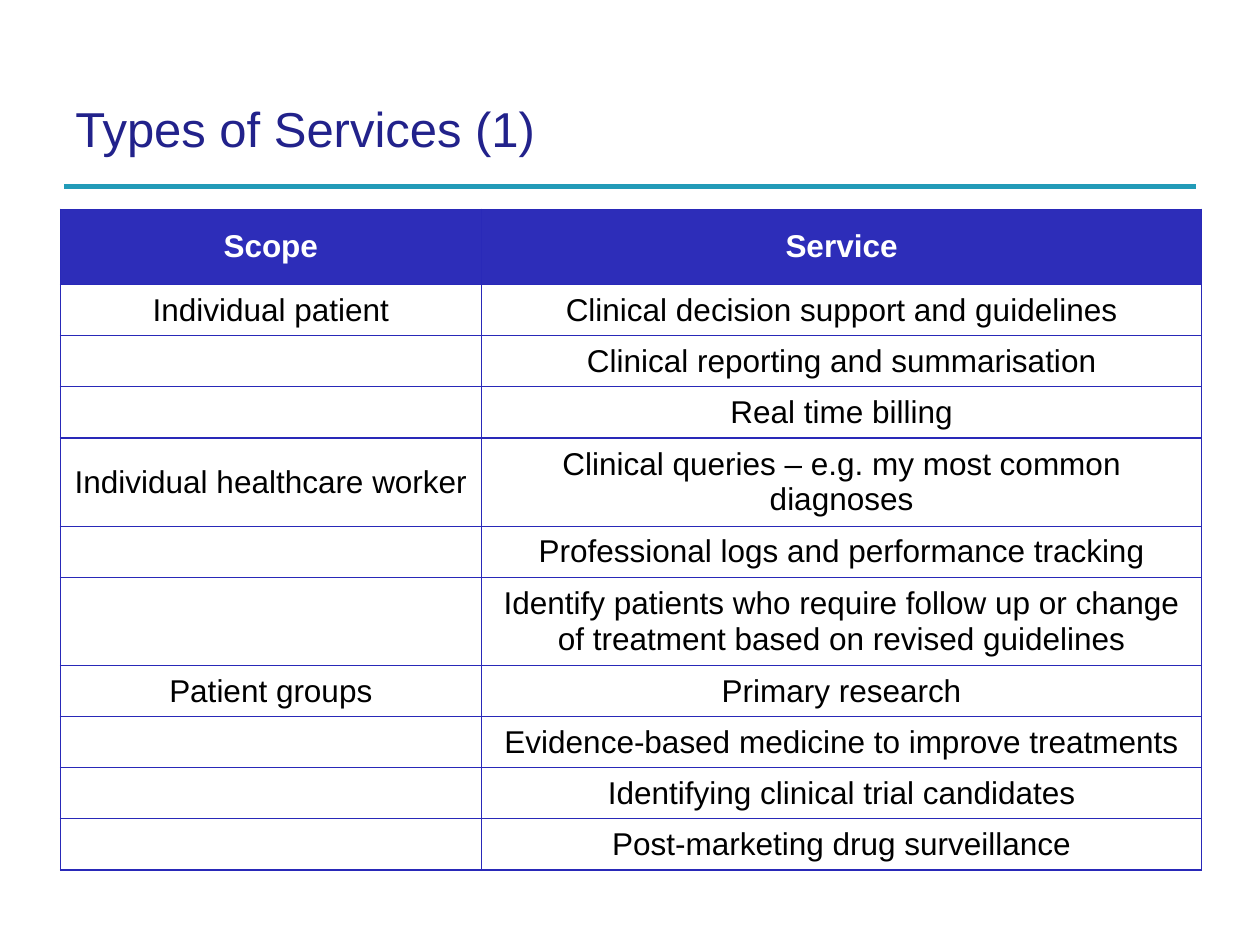
"""Build a slide that lists types of services by scope."""
from typing import NamedTuple

import pptx
import pptx.dml.color
import pptx.enum.shapes
import pptx.enum.text
import pptx.oxml
import pptx.oxml.ns
import pptx.util

Pt = pptx.util.Pt
FONT = "Arial"
NAVY, TEAL, BORDER, HEADER_FILL = "22228B", "229BB8", "2929B8", "2D2DB9"
WHITE, BLACK = "FFFFFF", "000000"
HEADER_HEIGHT, ROW_HEIGHT = 43.2, 29.2
COLUMN_WIDTHS = (240.5, 411.8)


class Service(NamedTuple):
    scope: str
    name: str


HEADINGS = Service("Scope", "Service")
SERVICES = [
    Service("Individual patient", "Clinical decision support and guidelines"),
    Service("", "Clinical reporting and summarisation"),
    Service("", "Real time billing"),
    Service("Individual healthcare worker", "Clinical queries – e.g. my most common diagnoses"),
    Service("", "Professional logs and performance tracking"),
    Service("", "Identify patients who require follow up or change of treatment based on revised guidelines"),
    Service("Patient groups", "Primary research"),
    Service("", "Evidence-based medicine to improve treatments"),
    Service("", "Identifying clinical trial candidates"),
    Service("", "Post-marketing drug surveillance"),
]


def rgb(value: str) -> pptx.dml.color.RGBColor:
    return pptx.dml.color.RGBColor.from_string(value)


def add_run(paragraph, text: str, size: float, color: str, bold: bool = False) -> None:
    run = paragraph.add_run()
    run.text = text
    run.font.name = FONT
    run.font.size = Pt(size)
    run.font.bold = bold
    run.font.color.rgb = rgb(color)


def add_title(slide, text: str) -> None:
    title = slide.shapes.add_textbox(Pt(36), Pt(50.4), Pt(648), Pt(45.4))
    frame = title.text_frame
    frame.word_wrap = True
    frame.vertical_anchor = pptx.enum.text.MSO_ANCHOR.MIDDLE
    add_run(frame.paragraphs[0], text, 28, NAVY)


def add_rule(slide) -> None:
    straight = pptx.enum.shapes.MSO_CONNECTOR.STRAIGHT
    rule = slide.shapes.add_connector(straight, Pt(36.8), Pt(106.4), Pt(683.2), Pt(106.4))
    rule.line.color.rgb = rgb(TEAL)
    rule.line.width = Pt(3)
    properties = rule._element.spPr
    properties.append(properties.makeelement(pptx.oxml.ns.qn("a:effectLst"), {}))


def set_borders(cell, color: str, width: float) -> None:
    properties = cell._tc.get_or_add_tcPr()
    for position, side in enumerate(("lnL", "lnR", "lnT", "lnB")):
        border = pptx.oxml.parse_xml(
            f'<a:{side} {pptx.oxml.ns.nsdecls("a")} w="{Pt(width)}"><a:solidFill>'
            f'<a:srgbClr val="{color}"/></a:solidFill></a:{side}>')
        properties.insert(position, border)


def fill_cell(cell, text: str, heading: bool) -> None:
    cell.vertical_anchor = pptx.enum.text.MSO_ANCHOR.MIDDLE
    if heading:
        cell.fill.solid()
        cell.fill.fore_color.rgb = rgb(HEADER_FILL)
    else:
        cell.fill.background()
    set_borders(cell, BORDER, 0.75)
    paragraph = cell.text_frame.paragraphs[0]
    paragraph.alignment = pptx.enum.text.PP_ALIGN.CENTER
    if text:
        add_run(paragraph, text, 18, WHITE if heading else BLACK, heading)


def add_service_table(slide) -> None:
    entries = [HEADINGS, *SERVICES]
    height = HEADER_HEIGHT + ROW_HEIGHT * len(SERVICES)
    services = slide.shapes.add_table(
        len(entries), len(COLUMN_WIDTHS), Pt(34.5), Pt(119.5),
        Pt(sum(COLUMN_WIDTHS)), Pt(height)).table
    services.horz_banding = False
    for column, width in zip(services.columns, COLUMN_WIDTHS):
        column.width = Pt(width)
    for index, (row, entry) in enumerate(zip(services.rows, entries)):
        row.height = Pt(ROW_HEIGHT if index else HEADER_HEIGHT)
        for cell, text in zip(row.cells, entry):
            fill_cell(cell, text, heading=index == 0)


def main() -> None:
    presentation = pptx.Presentation()
    presentation.slide_width, presentation.slide_height = Pt(720), Pt(540)
    slide = presentation.slides.add_slide(presentation.slide_layouts[6])
    add_rule(slide)
    add_title(slide, "Types of Services (1)")
    add_service_table(slide)
    presentation.save("out.pptx")


if __name__ == "__main__":
    main()
